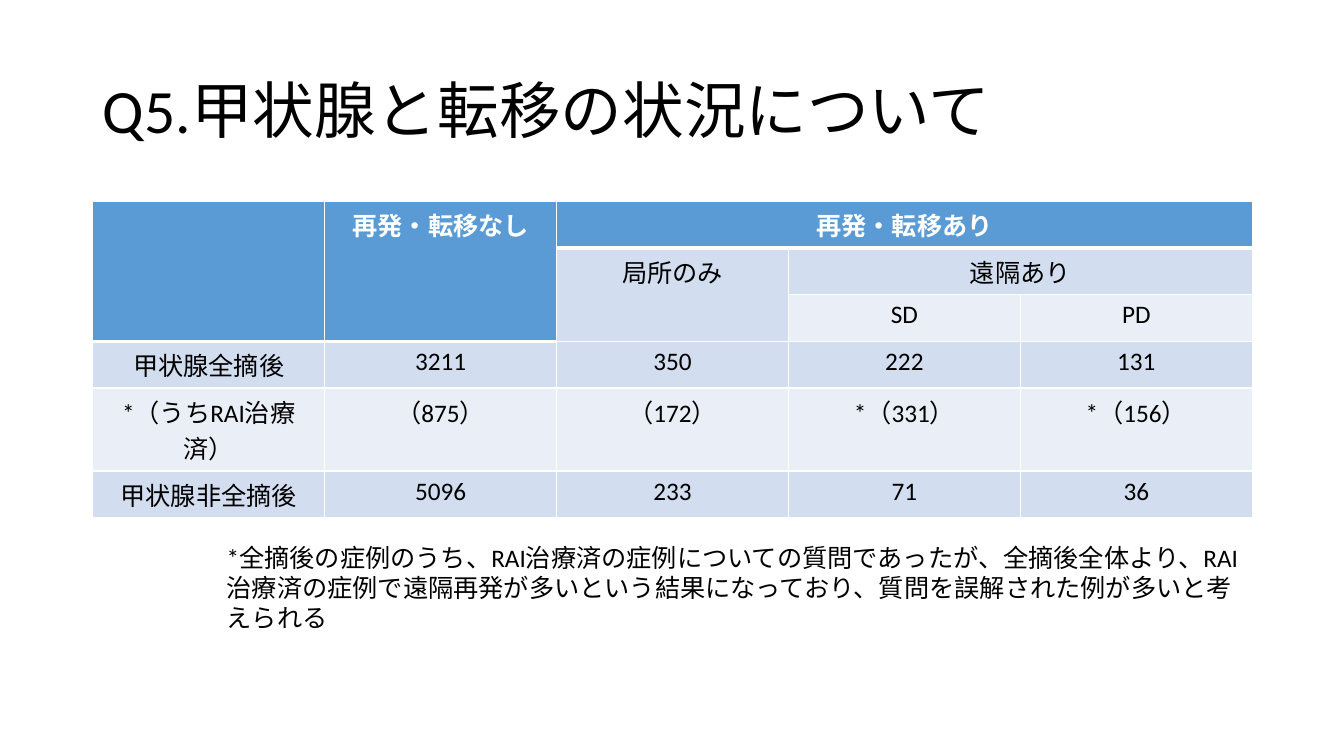
from lxml.etree import SubElement
from pptx import Presentation
from pptx.dml.color import RGBColor
from pptx.enum.text import MSO_ANCHOR as Anchor, PP_ALIGN as Align
from pptx.oxml.ns import qn
from pptx.util import Inches, Pt

FONT = "Calibri"
COLORS = {
    "header": "5B9BD5",
    "band_dark": "D2DEEF",
    "band_light": "EAEFF7",
    "white": "FFFFFF",
    "black": "000000",
}
COLUMN_WIDTH, ROW_HEIGHT = 2.3, 0.41
HEADER_ROWS = 3

# None marks a cell covered by a merge
ROWS = [
    ["", "再発・転移なし", "再発・転移あり", None, None],
    [None, None, "局所のみ", "遠隔あり", None],
    [None, None, None, "SD", "PD"],
    ["甲状腺全摘後", "3211", "350", "222", "131"],
    ["*（うちRAI治療済）", "（875）", "（172）", "*（331）", "*（156）"],
    ["甲状腺非全摘後", "5096", "233", "71", "36"],
]
# First and last cell of each merge, as (row, column)
MERGES = [
    ((0, 0), (2, 0)),
    ((0, 1), (2, 1)),
    ((0, 2), (0, 4)),
    ((1, 2), (2, 2)),
    ((1, 3), (1, 4)),
]
NOTE = (
    "*全摘後の症例のうち、RAI治療済の症例についての質問であったが、全摘後全体より、"
    "RAI治療済の症例で遠隔再発が多いという結果になっており、質問を誤解された例が多いと考えられる"
)


def write(frame, text, size, color="black", bold=False, align=Align.LEFT):
    para = frame.paragraphs[0]
    para.alignment = align
    span = para.add_run()
    span.text = text
    for name, value in {"name": FONT, "size": Pt(size), "bold": bold}.items():
        setattr(span.font, name, value)
    span.font.color.rgb = RGBColor.from_string(COLORS[color])
    return para


def add_title(page, text):
    title = page.shapes.title
    title.left, title.top = Inches(0.92), Inches(0.4)
    title.width, title.height = Inches(11.5), Inches(1.45)
    title.text_frame.vertical_anchor = Anchor.MIDDLE
    write(title.text_frame, text, 44).line_spacing = 0.9


def set_borders(cell, bottom):
    props = cell._tc.get_or_add_tcPr()
    for side, width in {"L": 1, "R": 1, "T": 1, "B": bottom}.items():
        line = SubElement(props, qn(f"a:ln{side}"), w=str(Pt(width)))
        fill = SubElement(line, qn("a:solidFill"))
        SubElement(fill, qn("a:srgbClr"), val=COLORS["white"])


def add_status_table(page):
    count = len(ROWS[0])
    table = page.shapes.add_table(
        len(ROWS), count, Inches(0.92), Inches(2),
        Inches(COLUMN_WIDTH * count), Inches(ROW_HEIGHT * len(ROWS)),
    ).table
    for column in table.columns:
        column.width = Inches(COLUMN_WIDTH)
    for row in table.rows:
        row.height = Inches(ROW_HEIGHT)

    for first, last in MERGES:
        table.cell(*first).merge(table.cell(*last))

    for r, texts in enumerate(ROWS):
        for c, text in enumerate(texts):
            cell = table.cell(r, c)
            header = r == 0 or (r < HEADER_ROWS and c < 2)
            band = "band_dark" if r % 2 else "band_light"
            set_borders(cell, bottom=3 if header else 1)
            cell.fill.solid()
            cell.fill.fore_color.rgb = RGBColor.from_string(
                COLORS["header" if header else band])
            if text:
                write(cell.text_frame, text, 18, "white" if header else "black",
                      header, Align.CENTER)


def add_note(page, text):
    box = page.shapes.add_textbox(
        Inches(2.15), Inches(5.33), Inches(10.26), Inches(0.71))
    box.text_frame.word_wrap = True
    write(box.text_frame, text, 18)


def main():
    deck = Presentation()
    deck.slide_width, deck.slide_height = Inches(13.33), Inches(7.5)
    page = deck.slides.add_slide(deck.slide_layouts[5])
    add_title(page, "Q5.甲状腺と転移の状況について")
    add_status_table(page)
    add_note(page, NOTE)
    deck.save("out.pptx")


if __name__ == "__main__":
    main()
